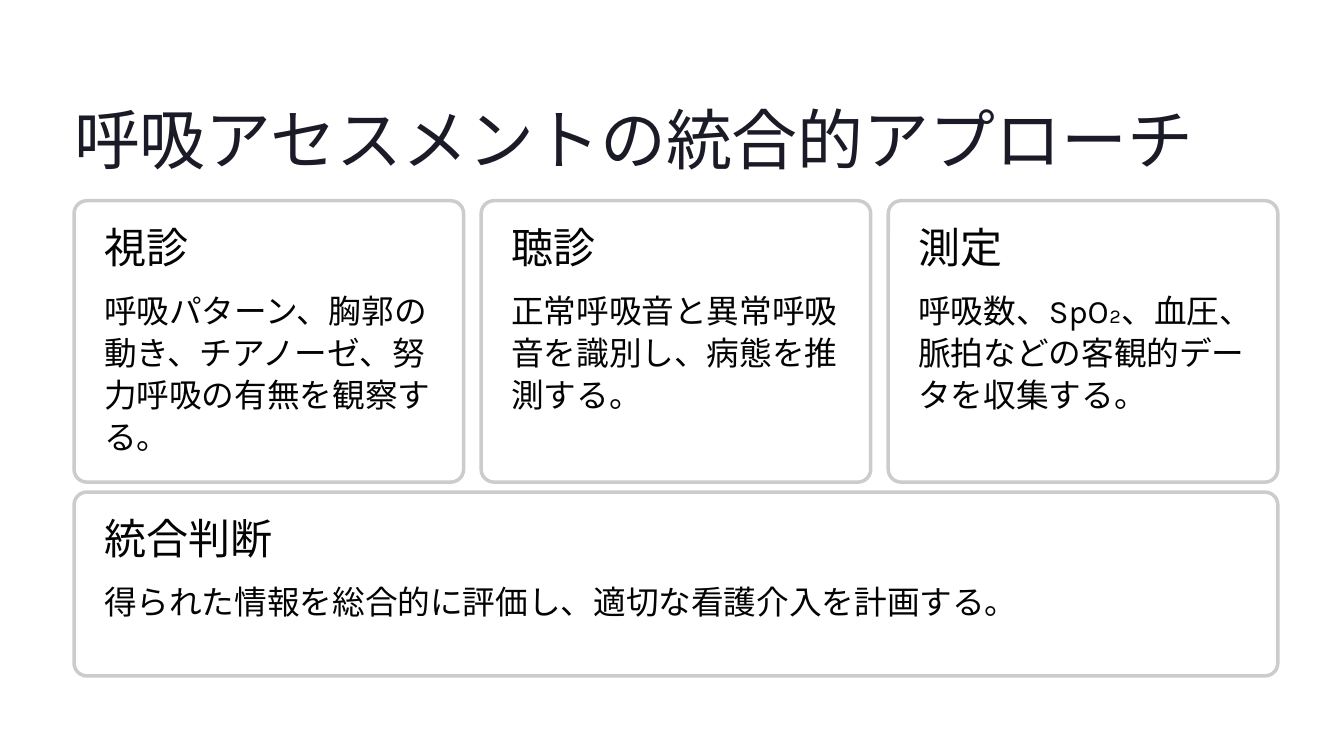
from pptx import Presentation
from pptx.dml.color import RGBColor
from pptx.enum.lang import MSO_LANGUAGE_ID
from pptx.enum.shapes import MSO_SHAPE
from pptx.enum.text import MSO_ANCHOR, MSO_AUTO_SIZE, PP_ALIGN
from pptx.oxml.ns import qn
from pptx.util import Cm, Pt

ROUND_RECT = MSO_SHAPE.ROUNDED_RECTANGLE
TOP = MSO_ANCHOR.TOP
LEFT = PP_ALIGN.LEFT
NO_FIT = MSO_AUTO_SIZE.NONE
JAPANESE = MSO_LANGUAGE_ID.JAPANESE

COLORS = {"title": "1B1B27", "text": "030303", "card": "FFFFFF", "border": "CCCCCC"}
HEADING_FONT, BODY_FONT = "Inter", "Karla"

MARGIN, CONTENT_W = 2.24, 36.4
GAP = 0.53
PAD_X, PAD_Y = 0.91, 0.89
RADIUS = 0.39

METHODS = [
    ("視診", "呼吸パターン、胸郭の動き、チアノーゼ、努力呼吸の有無を観察する。"),
    ("聴診", "正常呼吸音と異常呼吸音を識別し、病態を推測する。"),
    ("測定", "呼吸数、SpO₂、血圧、脈拍などの客観的データを収集する。"),
]
JUDGEMENT = ("統合判断", "得られた情報を総合的に評価し、適切な看護介入を計画する。")


def rgb(name):
    """Return the named colour."""
    return RGBColor.from_string(COLORS[name])


def write(sp, text, *, size, spacing, font, color="text"):
    """Write one left-aligned paragraph into a shape without insets."""
    tf = sp.text_frame
    tf.word_wrap = True
    tf.auto_size = NO_FIT
    tf.vertical_anchor = TOP
    tf.margin_left = tf.margin_right = tf.margin_top = tf.margin_bottom = 0
    p = tf.paragraphs[0]
    p.alignment = LEFT
    p.line_spacing = Pt(spacing)
    p.space_before = Pt(0)
    r = p.add_run()
    r.text = text
    r.font.size = Pt(size)
    r.font.name = font
    r.font.color.rgb = rgb(color)
    r.font.language_id = JAPANESE
    ea = r.font._element.makeelement(qn("a:ea"), {"typeface": font})
    r.font._element.find(qn("a:latin")).addnext(ea)


def add_title(slide, text, x, y, w, h):
    """Place and format the title placeholder."""
    sp = slide.shapes.title
    sp.left, sp.top, sp.width, sp.height = Cm(x), Cm(y), Cm(w), Cm(h)
    write(sp, text, size=56.5, spacing=71, font=HEADING_FONT, color="title")


def add_card(slide, heading, body, x, y, w, h):
    """Draw a rounded card with a heading and a body text."""
    sp = slide.shapes.add_shape(ROUND_RECT, Cm(x), Cm(y), Cm(w), Cm(h))
    sp.shadow.inherit = False
    sp.adjustments[0] = RADIUS / min(w, h)
    sp.fill.solid()
    sp.fill.fore_color.rgb = rgb("card")
    sp.line.color.rgb = rgb("border")
    sp.line.width = Pt(3)

    left, top, text_w = x + PAD_X, y + PAD_Y, w - 2 * PAD_X - 0.06
    body_top = top + 1.75
    sp = slide.shapes.add_textbox(Cm(left), Cm(top), Cm(text_w), Cm(1.45))
    write(sp, heading, size=36, spacing=35.5, font=HEADING_FONT)
    sp = slide.shapes.add_textbox(
        Cm(left), Cm(body_top), Cm(text_w), Cm(y + h - PAD_Y - body_top))
    write(sp, body, size=28, spacing=36, font=BODY_FONT)


def add_method_row(slide, x, y, w, h):
    """Spread the method cards evenly over a row."""
    card_w = (w - GAP * (len(METHODS) - 1)) / len(METHODS)
    for i, (heading, body) in enumerate(METHODS):
        add_card(slide, heading, body, x + i * (card_w + GAP), y, card_w, h)


def main():
    """Build the slide and save it."""
    prs = Presentation()
    prs.slide_width, prs.slide_height = Cm(40.64), Cm(22.86)
    slide = prs.slides.add_slide(prs.slide_layouts[5])
    add_title(slide, "呼吸アセスメントの統合的アプローチ", MARGIN, 2.87, CONTENT_W, 2.51)
    add_method_row(slide, MARGIN, 6.07, CONTENT_W, 8.51)
    add_card(slide, *JUDGEMENT, MARGIN, 14.88, CONTENT_W, 5.56)
    prs.save("out.pptx")


if __name__ == "__main__":
    main()
